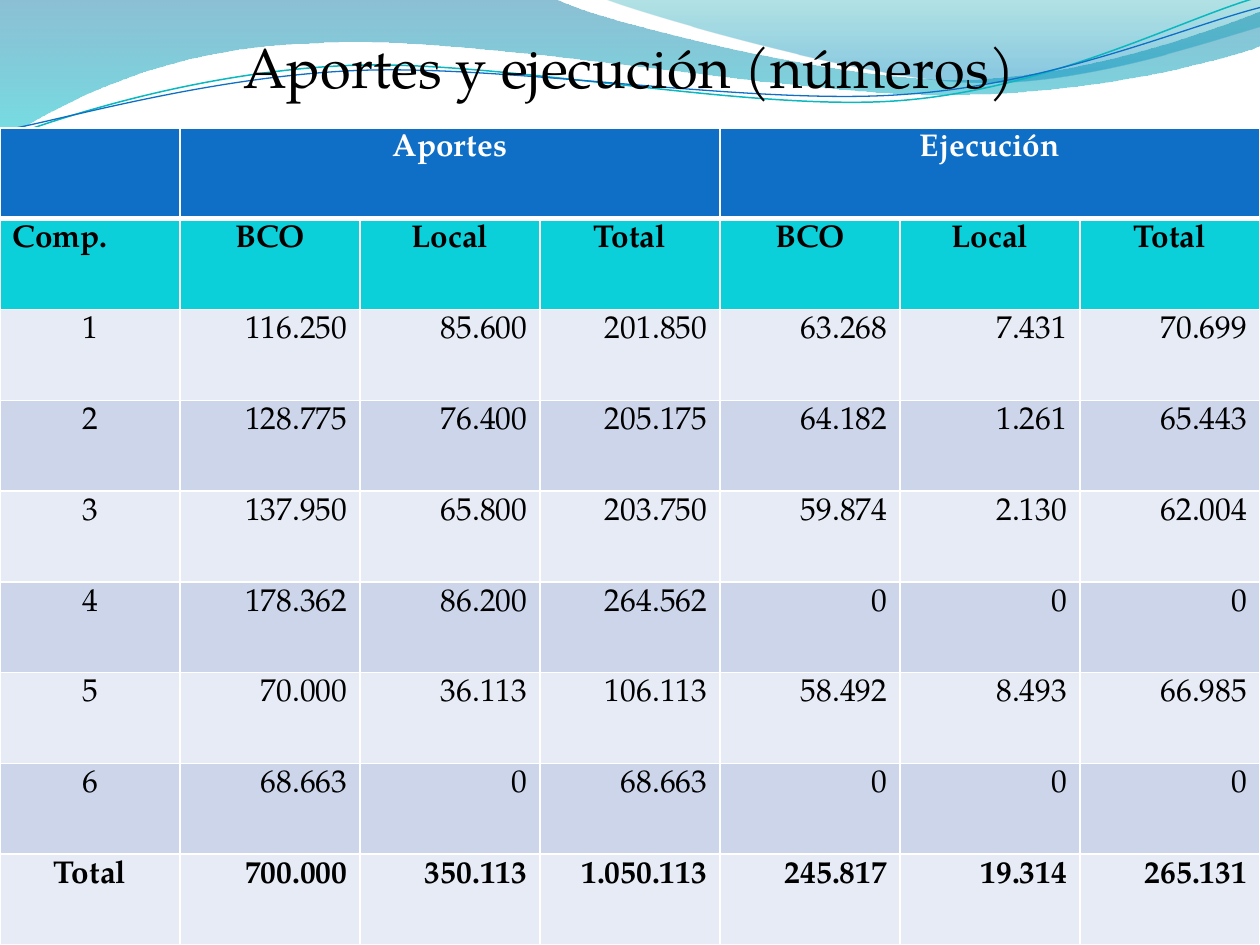
"""Build the slide with the table of contributions and execution by component."""
from lxml.etree import SubElement
from pptx import Presentation
from pptx.dml.color import RGBColor
from pptx.enum.text import MSO_ANCHOR, PP_ALIGN
from pptx.oxml.ns import qn
from pptx.util import Cm, Pt

TITLE = "Aportes y ejecución (números)"
ROWS = [
    ["", "Aportes", "", "", "Ejecución", "", ""],
    ["Comp.", "BCO", "Local", "Total", "BCO", "Local", "Total"],
    ["1", "116.250", "85.600", "201.850", "63.268", "7.431", "70.699"],
    ["2", "128.775", "76.400", "205.175", "64.182", "1.261", "65.443"],
    ["3", "137.950", "65.800", "203.750", "59.874", "2.130", "62.004"],
    ["4", "178.362", "86.200", "264.562", "0", "0", "0"],
    ["5", "70.000", "36.113", "106.113", "58.492", "8.493", "66.985"],
    ["6", "68.663", "0", "68.663", "0", "0", "0"],
    ["Total", "700.000", "350.113", "1.050.113", "245.817", "19.314", "265.131"],
]
GROUP_COLUMNS = [(1, 3), (4, 6)]
HEADER_FILLS = ["0F6FC6", "0BD0D9"]
BAND_FILLS = ["E7EBF5", "CCD5EA"]
FONT = "TeX Gyre Pagella"

CM_PER_INCH = 2.54
WAVES = [
    {
        "path": [
            (0, 0), (4.4, -0.01),
            (4.76, 0.17, 6.64, 0.63, 7.58, 0.63),
            (8.53, 0.63, 9.58, 0.26, 10, 0.09),
            (10.01, 0.36),
            (9.83, 0.44, 8.7, 0.76, 7.46, 0.75),
            (6.22, 0.75, 3.82, 0.28, 2.57, 0.34),
            (1.29, 0.36, 0.46, 0.83, -0.01, 1.13),
        ],
        "gradient": [(0, "0074A1", 45), (1, "00C6CF", 55)],
    },
    {
        "path": [
            (4.79, -0.01),
            (5.09, 0.11, 6.82, 0.62, 7.69, 0.65),
            (8.56, 0.69, 9.61, 0.32, 10, 0.21),
            (10, 0),
        ],
        "gradient": [(0, "00A1A9", 30), (0.8, "008BBF", 45)],
    },
    {
        "path": [
            (0, 1.11),
            (0.48, 0.93, 1.58, 0.57, 2.77, 0.52),
            (3.95, 0.47, 5.93, 0.89, 7.13, 0.8),
            (8.33, 0.71, 9.38, 0.15, 9.98, -0.02),
        ],
        "line": ("0AB8BF", 0.85),
    },
    {
        "path": [
            (0, 1.04),
            (0.47, 0.96, 1.64, 0.61, 2.83, 0.56),
            (4.03, 0.51, 5.97, 0.84, 7.17, 0.75),
            (8.36, 0.67, 9.41, 0.21, 10, 0.06),
        ],
        "line": ("0F6FC6", 0.75),
    },
]


def color(value):
    return RGBColor.from_string(value)


def draw_path(page, path, close):
    points = [
        (Cm(x * CM_PER_INCH), Cm(y * CM_PER_INCH))
        for step in path for x, y in zip(step[::2], step[1::2])
    ]
    builder = page.shapes.build_freeform(*points[0])
    builder.add_line_segments(points[1:], close=close)
    shape = builder.convert_to_shape()
    segments = iter(shape.element.xpath(".//a:path/a:lnTo"))
    for step in path[1:]:
        curve = next(segments)
        if len(step) == 2:
            continue
        bezier = curve.makeelement(qn("a:cubicBezTo"))
        curve.addprevious(bezier)
        for segment in (curve, next(segments), next(segments)):
            bezier.append(segment[0])
            segment.getparent().remove(segment)
    return shape


def add_wave(page, wave):
    shape = draw_path(page, wave["path"], "gradient" in wave)
    shape.shadow.inherit = False
    if "line" in wave:
        shape.fill.background()
        shape.line.color.rgb = color(wave["line"][0])
        shape.line.width = Pt(wave["line"][1])
        return
    shape.line.fill.background()
    shape.fill.gradient()
    shape.fill.gradient_angle = 270
    for stop, (position, value, _) in zip(shape.fill.gradient_stops, wave["gradient"]):
        stop.position = position
        stop.color.rgb = color(value)
    stop_colors = shape.element.xpath(".//a:gs/a:srgbClr")
    for node, (_, _, opacity) in zip(stop_colors, wave["gradient"]):
        SubElement(node, qn("a:alpha"), val=str(opacity * 1000))


def write(frame, text, align, value, **font):
    para = frame.paragraphs[0]
    para.alignment = align
    span = para.add_run()
    span.text = text
    for name, setting in {"name": FONT, **font}.items():
        setattr(span.font, name, setting)
    span.font.color.rgb = color(value)


def add_title(page):
    box = page.shapes.add_textbox(Cm(0.89), Cm(0.53), Cm(23.6), Cm(6.25))
    box.text_frame.word_wrap = True
    box.text_frame.vertical_anchor = MSO_ANCHOR.TOP
    write(box.text_frame, TITLE, PP_ALIGN.CENTER, "000000", size=Pt(32))


def set_borders(cell, widths):
    properties = cell._tc.get_or_add_tcPr()
    for side, width in widths.items():
        border = SubElement(properties, qn(f"a:ln{side}"), w=str(Pt(width)))
        SubElement(SubElement(border, qn("a:solidFill")), qn("a:srgbClr"), val="FFFFFF")


def cell_align(row, column):
    if row == 1 and column == 0:
        return PP_ALIGN.LEFT
    if row < len(HEADER_FILLS) or column == 0:
        return PP_ALIGN.CENTER
    return PP_ALIGN.RIGHT


def add_figures(page):
    row_count, column_count = len(ROWS), len(ROWS[0])
    table = page.shapes.add_table(
        row_count, column_count, Cm(0), Cm(2.58), Cm(25.4), Cm(16.47)
    ).table
    for first, last in GROUP_COLUMNS:
        table.cell(0, first).merge(table.cell(0, last))
    headers = len(HEADER_FILLS)
    for row, texts in enumerate(ROWS):
        bold = row < headers or row == row_count - 1
        fill = HEADER_FILLS[row] if row < headers else BAND_FILLS[row % 2]
        widths = {"L": 1, "R": 1, "T": 3 if row == 1 else 1, "B": 3 if row == 0 else 1}
        for column, text in enumerate(texts):
            cell = table.cell(row, column)
            set_borders(cell, widths)
            cell.fill.solid()
            cell.fill.fore_color.rgb = color(fill)
            if text:
                value = "FFFFFF" if row == 0 else "000000"
                write(cell.text_frame, text, cell_align(row, column), value,
                      size=Pt(18), bold=bold)


def main():
    deck = Presentation()
    deck.slide_width, deck.slide_height = Cm(25.4), Cm(19.05)
    page = deck.slides.add_slide(deck.slide_layouts[6])
    for wave in WAVES:
        add_wave(page, wave)
    add_title(page)
    add_figures(page)
    deck.save("out.pptx")


if __name__ == "__main__":
    main()
